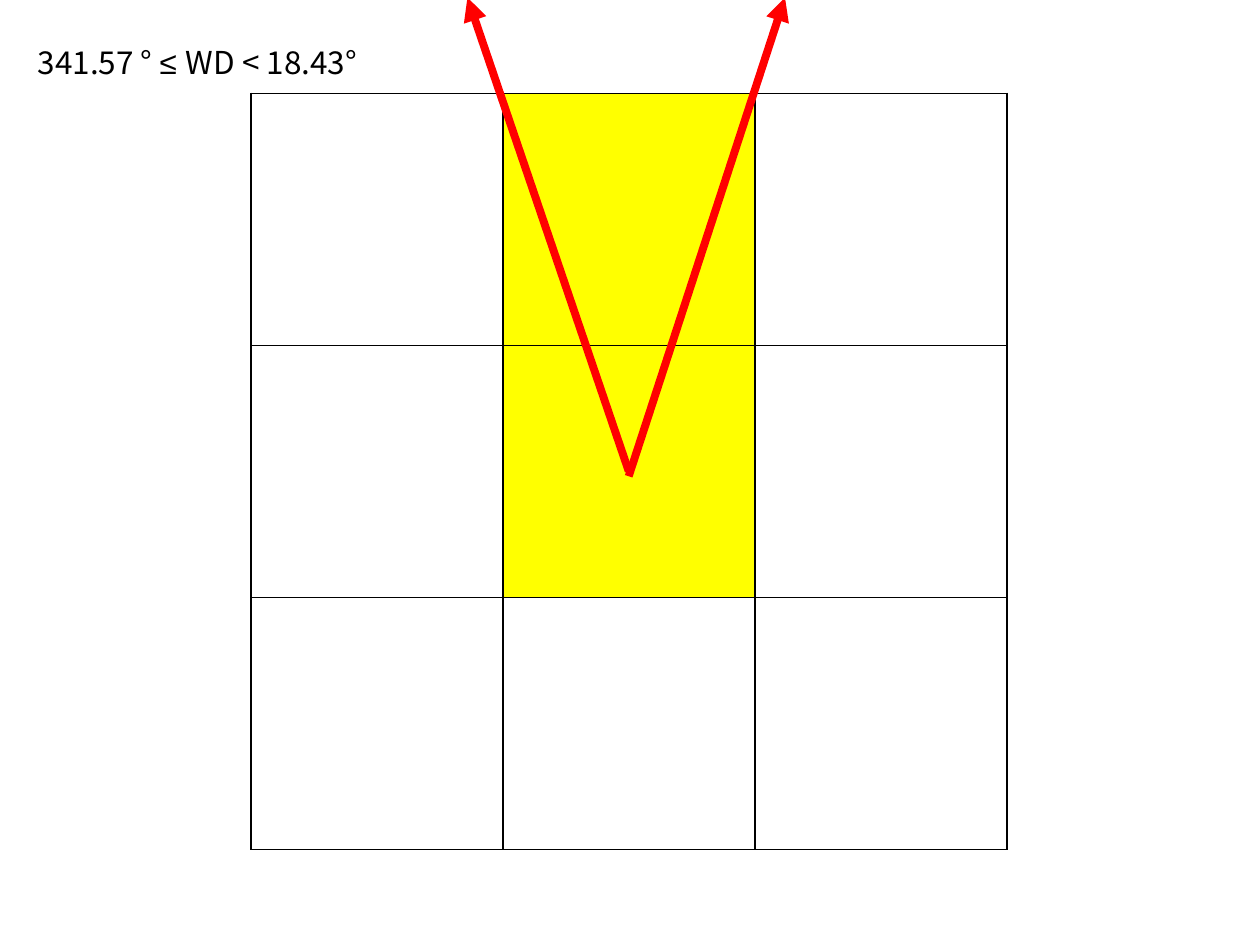
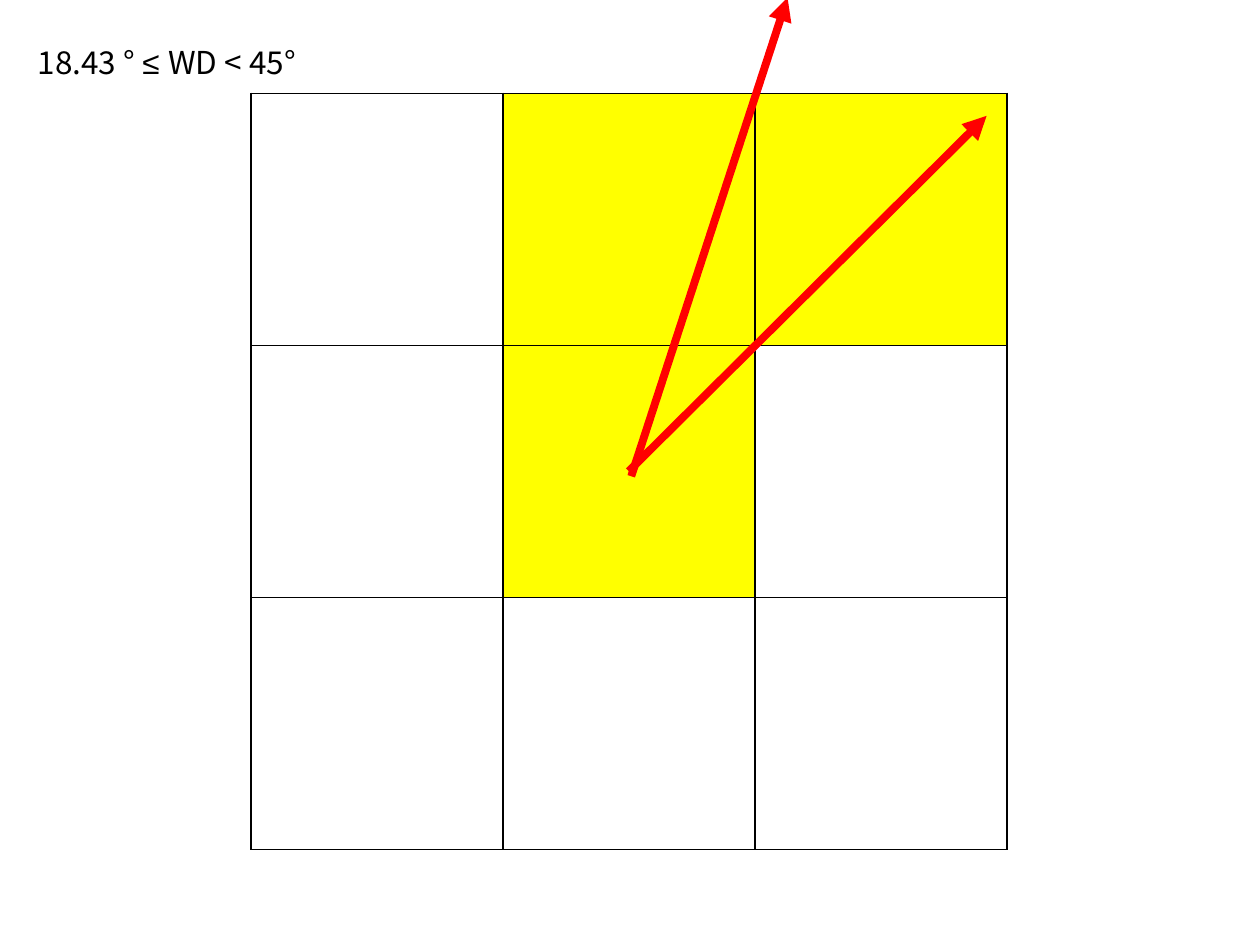
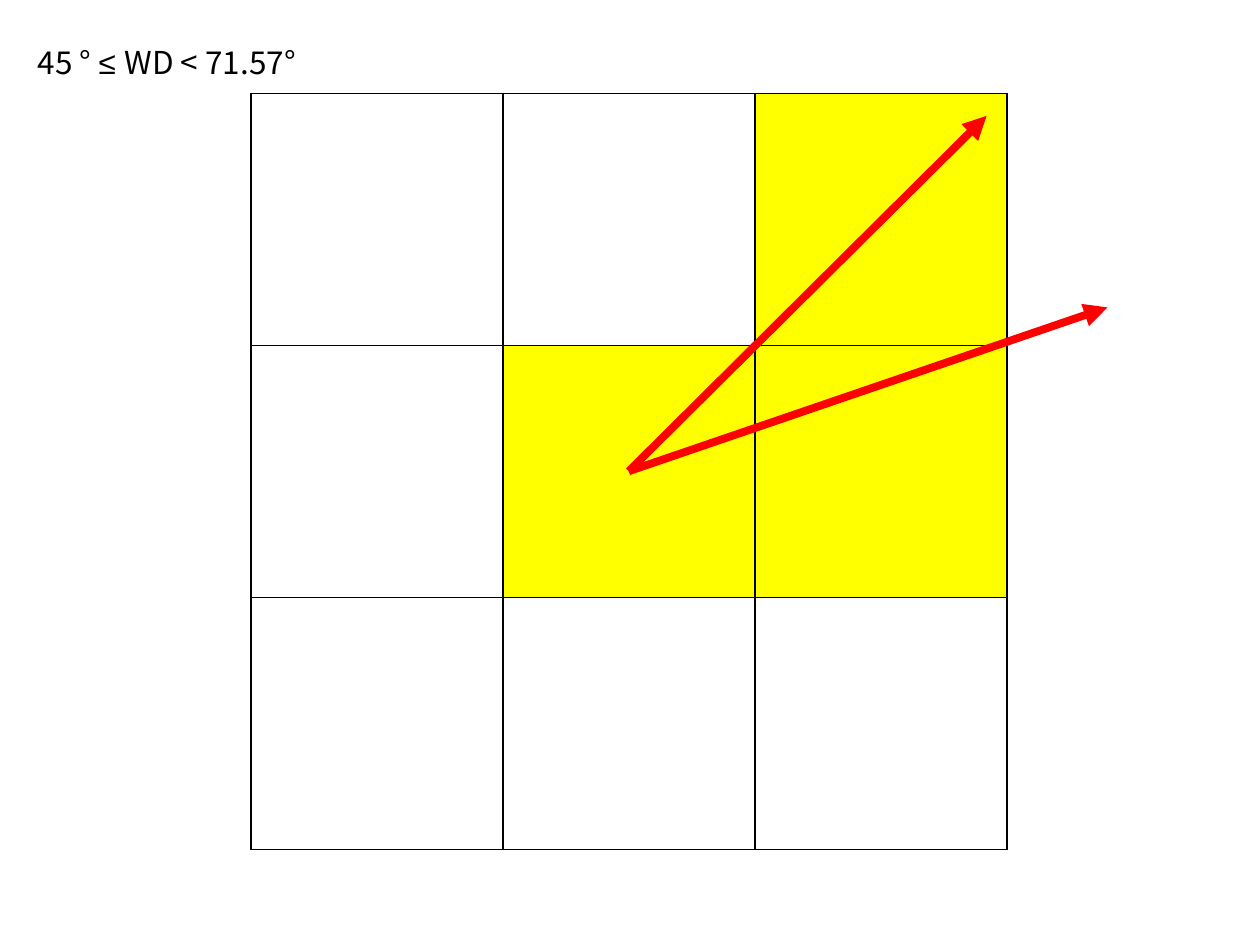
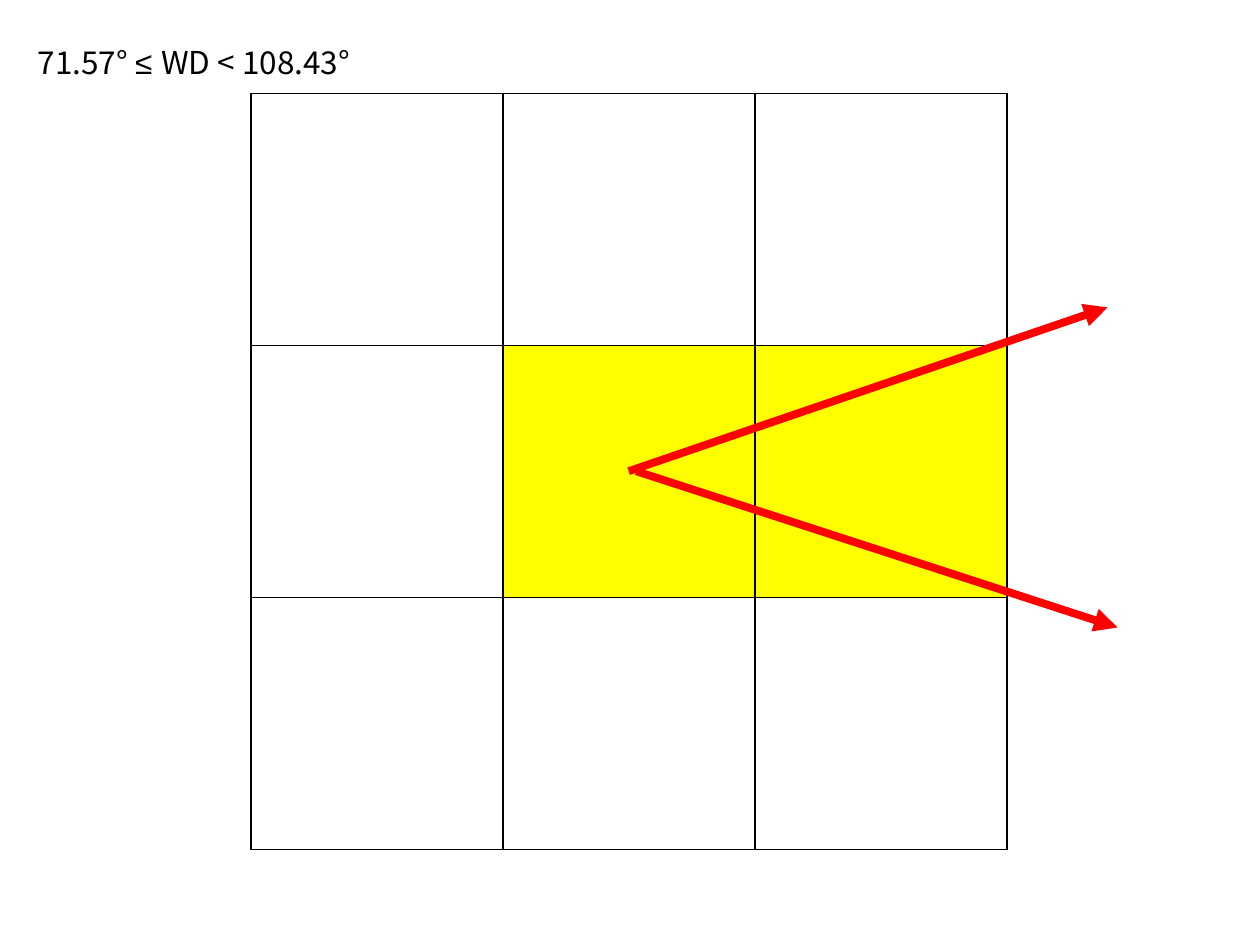
from dataclasses import dataclass
from typing import NamedTuple

from lxml import etree
from pptx import Presentation
from pptx.dml.color import RGBColor
from pptx.enum.shapes import MSO_CONNECTOR
from pptx.enum.text import MSO_ANCHOR, MSO_AUTO_SIZE, PP_ALIGN
from pptx.oxml.ns import qn
from pptx.util import Inches, Pt

STRAIGHT = MSO_CONNECTOR.STRAIGHT
TOP, LEFT = MSO_ANCHOR.TOP, PP_ALIGN.LEFT
GROW = MSO_AUTO_SIZE.SHAPE_TO_FIT_TEXT
TITLE_ONLY = 5


@dataclass(frozen=True)
class Theme:
    ink: str = "000000"
    mark: str = "FFFF00"
    ray: str = "FF0000"
    font: str = "Noto Sans CJK KR"
    sign: str = "Arial"
    text: float = 18
    rule: float = 1
    ray_width: float = 4.5


@dataclass(frozen=True)
class Grid:
    left: float = 1.99
    top: float = 0.74
    cell: float = 2
    count: int = 3

    def x(self, col: float) -> int:
        return Inches(self.left + col * self.cell)

    def y(self, row: float) -> int:
        return Inches(self.top + row * self.cell)


class Spot(NamedTuple):
    col: float
    row: float


class Ray(NamedTuple):
    start: Spot
    tip: Spot


class Sector(NamedTuple):
    low: str
    high: str
    width: float
    cells: set[tuple[int, int]]  # (row, column)
    rays: tuple[Ray, Ray]


THEME, GRID = Theme(), Grid()

# Wind rays, in columns and rows from the grid's corner
MID = Spot(1.5, 1.5)
NNW = Ray(MID, Spot(0.86, -0.38))
NNE = Ray(Spot(1.5, 1.52), Spot(2.12, -0.38))
NNE_IN = Ray(Spot(1.51, 1.52), Spot(2.13, -0.38))
NE = Ray(MID, Spot(2.92, 0.09))
ENE = Ray(MID, Spot(3.4, 0.85))
ESE = Ray(Spot(1.53, 1.5), Spot(3.44, 2.12))

SECTORS = [
    Sector("341.57 °", "18.43°", 3.01, {(0, 1), (1, 1)}, (NNW, NNE)),
    Sector("18.43 °", "45°", 2.54, {(0, 1), (0, 2), (1, 1)}, (NNE_IN, NE)),
    Sector("45 °", "71.57°", 2.54, {(0, 2), (1, 1), (1, 2)}, (ENE, NE)),
    Sector("71.57°", "108.43°", 2.92, {(1, 1), (1, 2)}, (ENE, ESE)),
]


def add_title(slide, sector: Sector) -> None:
    title = slide.shapes.title
    title.left, title.top = Inches(0.2), Inches(0.29)
    title.width, title.height = Inches(sector.width), Inches(0.4)
    frame = title.text_frame
    frame.word_wrap, frame.auto_size = False, GROW
    frame.vertical_anchor = TOP
    para = frame.paragraphs[0]
    para.alignment = LEFT
    parts = [(f"{sector.low} ", THEME.font), ("≤ ", THEME.sign),
             (f"WD < {sector.high}", THEME.font)]
    for text, face in parts:
        run = para.add_run()
        run.text = text
        run.font.size = Pt(THEME.text)
        run.font.color.rgb = RGBColor.from_string(THEME.ink)
        run.font.name = face
        east = etree.SubElement(run.font._element, qn("a:ea"))
        east.set("typeface", face)


def add_rules(cell) -> None:
    """Draw the four borders; they must precede the cell's fill."""
    props = cell._tc.get_or_add_tcPr()
    for side in ("a:lnL", "a:lnR", "a:lnT", "a:lnB"):
        line = etree.SubElement(props, qn(side), w=str(Pt(THEME.rule)))
        fill = etree.SubElement(line, qn("a:solidFill"))
        etree.SubElement(fill, qn("a:srgbClr"), val=THEME.ink)


def add_grid(slide, marked: set[tuple[int, int]]) -> None:
    size = Inches(GRID.cell * GRID.count)
    table = slide.shapes.add_table(GRID.count, GRID.count, GRID.x(0),
                                   GRID.y(0), size, size).table
    table.first_row = table.horz_banding = False
    for row in range(GRID.count):
        for col in range(GRID.count):
            cell = table.cell(row, col)
            add_rules(cell)
            if (row, col) in marked:
                cell.fill.solid()
                cell.fill.fore_color.rgb = RGBColor.from_string(THEME.mark)
            else:
                cell.fill.background()


def add_ray(slide, ray: Ray) -> None:
    start, tip = ray
    arrow = slide.shapes.add_connector(
        STRAIGHT, GRID.x(start.col), GRID.y(start.row),
        GRID.x(tip.col), GRID.y(tip.row))
    arrow.line.color.rgb = RGBColor.from_string(THEME.ray)
    arrow.line.width = Pt(THEME.ray_width)
    etree.SubElement(arrow.line._get_or_add_ln(), qn("a:tailEnd"),
                     type="triangle")
    etree.SubElement(arrow._element.spPr, qn("a:effectLst"))


def main() -> None:
    deck = Presentation()
    deck.slide_width, deck.slide_height = Inches(10), Inches(7.5)
    for sector in SECTORS:
        slide = deck.slides.add_slide(deck.slide_layouts[TITLE_ONLY])
        add_title(slide, sector)
        add_grid(slide, sector.cells)
        for ray in sector.rays:
            add_ray(slide, ray)
    deck.save("out.pptx")


if __name__ == "__main__":
    main()
